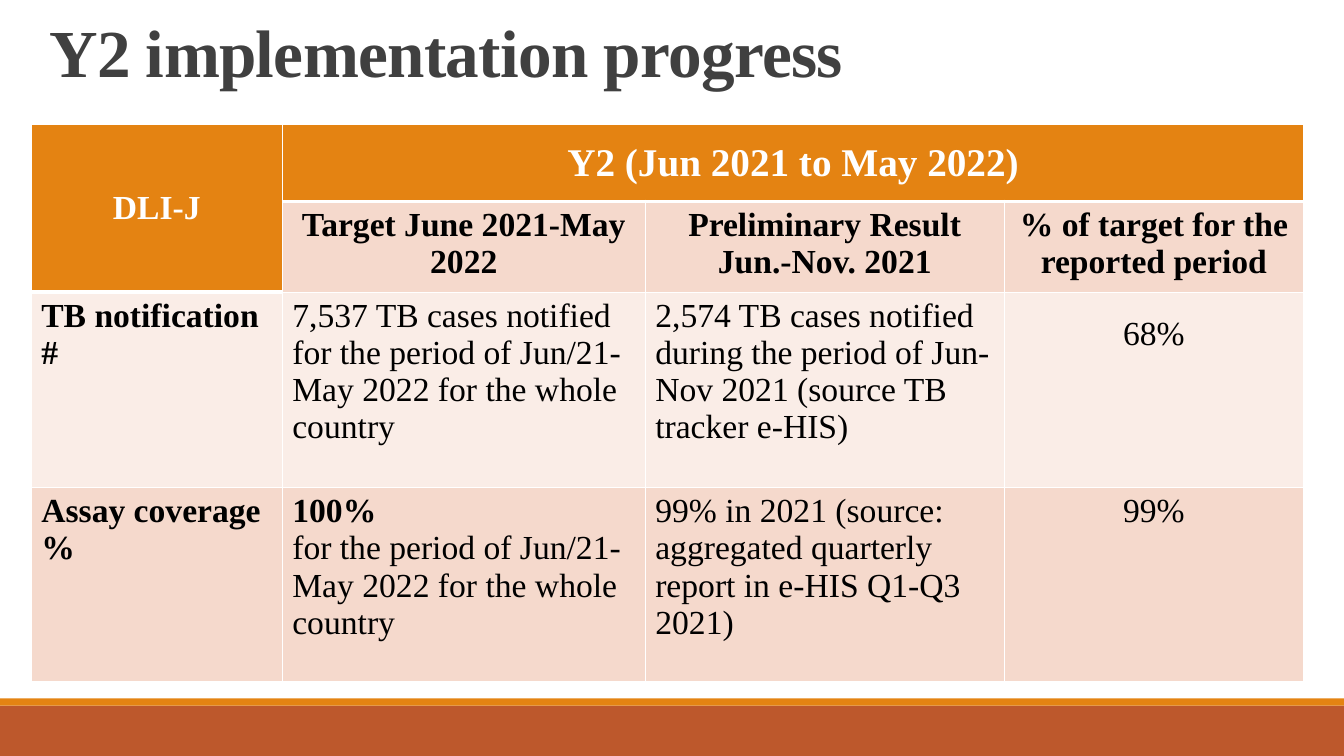
from lxml.etree import SubElement
from pptx import Presentation
from pptx.dml.color import RGBColor
from pptx.enum.shapes import MSO_SHAPE as SHAPE
from pptx.enum.text import MSO_ANCHOR as ANCHOR, PP_ALIGN as ALIGN
from pptx.oxml.ns import qn
from pptx.util import Inches, Pt

FONT = "Times New Roman"
WHITE = RGBColor(0xFF, 0xFF, 0xFF)
BLACK = RGBColor(0, 0, 0)
GRAY = RGBColor(0x40, 0x40, 0x40)
ORANGE = RGBColor(0xE4, 0x83, 0x12)
RUST = RGBColor(0xBD, 0x58, 0x2C)
PEACH = RGBColor(0xF5, 0xD9, 0xCC)
PALE = RGBColor(0xFA, 0xED, 0xE7)

COLS = [2.49, 3.6, 3.56, 2.97]
ROWS = [0.77, 0.57, 1.94, 1.92]  # the second row grows to fit its text
ROW_FILLS = [ORANGE, PEACH, PALE, PEACH]
# Each cell holds its paragraphs; None is covered by a merged cell
CELLS = [
    [["DLI-J"], ["Y2 (Jun 2021 to May 2022)"], None, None],
    [None, ["Target June 2021-May 2022"], ["Preliminary Result Jun.-Nov. 2021"],
     ["% of target for the reported period"]],
    [["TB notification", "#"],
     ["7,537 TB cases notified for the period of Jun/21-May 2022 for the whole country"],
     ["2,574 TB cases notified during the period of Jun-Nov 2021 (source TB tracker e-HIS)"],
     ["68%"]],
    [["Assay coverage %"],
     ["100%", "for the period of Jun/21-May 2022 for the whole country"],
     ["99% in 2021 (source: aggregated quarterly report in e-HIS Q1-Q3 2021)"],
     ["99%"]],
]


def add_text(p, text, size=24, color=BLACK, bold=False, align=ALIGN.LEFT,
             line_spacing=None, tracking=None):
    p.alignment = align
    if line_spacing:
        p.line_spacing = line_spacing
    r = p.add_run()
    r.text = text
    r.font.name, r.font.size, r.font.bold = FONT, Pt(size), bold
    r.font.color.rgb = color
    if tracking:
        r._r.get_or_add_rPr().set("spc", str(int(tracking * 100)))


def add_band(slide, x, y, w, h, color):
    s = slide.shapes.add_shape(SHAPE.RECTANGLE, Inches(x), Inches(y), Inches(w), Inches(h))
    s.shadow.inherit = False
    s.fill.solid()
    s.fill.fore_color.rgb = color
    s.line.fill.background()


def add_footer(slide, x, y, w, h):
    stripe = 0.07
    add_band(slide, x, y + stripe, w, h - stripe, RUST)
    add_band(slide, x, y, w, stripe, ORANGE)


def add_title(slide, x, y, w, h):
    tf = slide.shapes.add_textbox(Inches(x), Inches(y), Inches(w), Inches(h)).text_frame
    tf.word_wrap = True
    tf.vertical_anchor = ANCHOR.MIDDLE
    add_text(tf.paragraphs[0], "Y2 implementation progress", size=48, color=GRAY,
             bold=True, line_spacing=0.85, tracking=-0.5)


def is_header(row, col):
    return row == 0 or (row, col) == (1, 0)


def set_borders(cell, top, bottom):
    tc_pr = cell._tc.get_or_add_tcPr()
    for side, width in (("L", 1), ("R", 1), ("T", top), ("B", bottom)):
        ln = SubElement(tc_pr, qn(f"a:ln{side}"), w=str(Pt(width)))
        SubElement(SubElement(ln, qn("a:solidFill")), qn("a:srgbClr"), val=str(WHITE))


def fill_cell(cell, row, col, paragraphs):
    header = is_header(row, col)
    set_borders(cell, top=3 if row and is_header(row - 1, col) else 1,
                bottom=3 if header else 1)
    cell.fill.solid()
    cell.fill.fore_color.rgb = ORANGE if header else ROW_FILLS[row]
    if header:
        cell.vertical_anchor = ANCHOR.MIDDLE
    tf = cell.text_frame
    for i, text in enumerate(paragraphs or []):
        p = tf.add_paragraph() if i else tf.paragraphs[0]
        add_text(p, text,
                 size=28 if (row, col) == (0, 1) else 24,
                 color=WHITE if header else BLACK,
                 bold=row < 2 or col == 0 or text == "100%",
                 align=ALIGN.CENTER if row < 2 or col == 3 else ALIGN.LEFT,
                 line_spacing=1.5 if text == "68%" else None)


def add_progress_table(slide, x, y):
    table = slide.shapes.add_table(len(ROWS), len(COLS), Inches(x), Inches(y),
                                   Inches(sum(COLS)), Inches(sum(ROWS))).table
    table.first_row = table.horz_banding = False
    for column, width in zip(table.columns, COLS):
        column.width = Inches(width)
    for table_row, height in zip(table.rows, ROWS):
        table_row.height = Inches(height)
    table.cell(0, 0).merge(table.cell(1, 0))
    table.cell(0, 1).merge(table.cell(0, 3))
    for row, contents in enumerate(CELLS):
        for col, paragraphs in enumerate(contents):
            fill_cell(table.cell(row, col), row, col, paragraphs)


def main():
    prs = Presentation()
    prs.slide_width, prs.slide_height = Inches(13.33), Inches(7.5)
    slide = prs.slides.add_slide(prs.slide_layouts[6])
    add_footer(slide, 0, 6.93, 13.33, 0.57)
    add_title(slide, 0.39, 0.15, 12.46, 0.82)
    add_progress_table(slide, 0.31, 1.23)
    prs.save("out.pptx")


if __name__ == "__main__":
    main()
